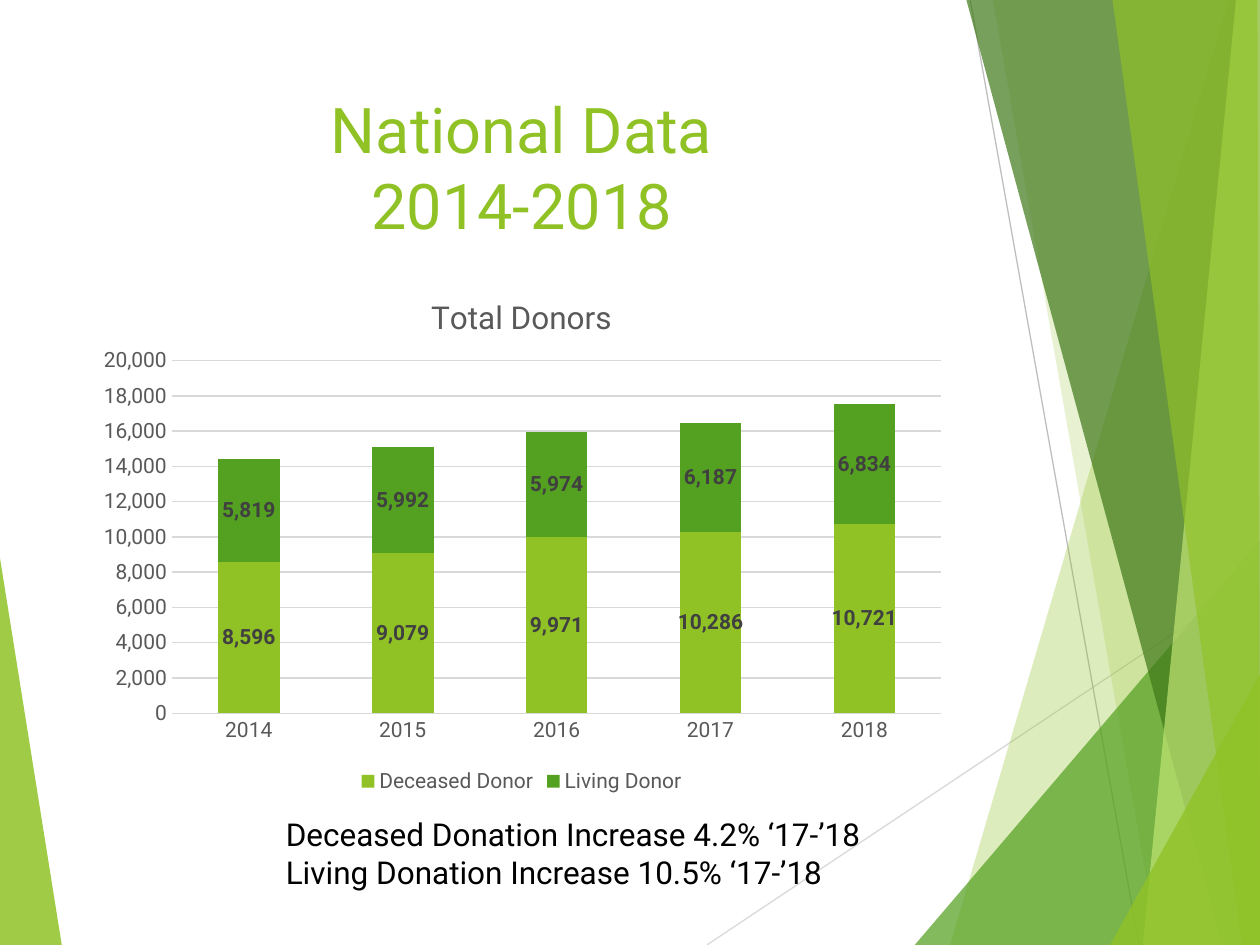
from lxml.etree import SubElement
from pptx import Presentation
from pptx.chart.data import CategoryChartData
from pptx.dml.color import RGBColor
from pptx.enum.chart import XL_CHART_TYPE, XL_LABEL_POSITION, XL_LEGEND_POSITION, XL_TICK_MARK
from pptx.enum.shapes import MSO_CONNECTOR
from pptx.enum.text import MSO_ANCHOR, MSO_AUTO_SIZE, PP_ALIGN
from pptx.oxml import parse_xml
from pptx.oxml.ns import nsdecls, qn
from pptx.util import Inches, Pt

FONT = "Roboto"
LIME = RGBColor(0x90, 0xC2, 0x26)
GREEN = RGBColor(0x54, 0xA0, 0x21)
DARK = RGBColor(0x3F, 0x78, 0x19)
PALE = RGBColor(0xC0, 0xE4, 0x74)
BLACK = RGBColor(0, 0, 0)
TEXT = RGBColor(0x59, 0x59, 0x59)
LABEL = RGBColor(0x40, 0x40, 0x40)
GRID = RGBColor(0xD9, 0xD9, 0xD9)
GRAY = RGBColor(0xBF, 0xBF, 0xBF)

# Content
TITLE = "National Data\v2014-2018"
HEAD = "Total Donors"
YEARS = ["2014", "2015", "2016", "2017", "2018"]
DONORS = [
    ("Deceased Donor", LIME, [8596, 9079, 9971, 10286, 10721]),
    ("Living Donor", GREEN, [5819, 5992, 5974, 6187, 6834]),
]
NOTES = "Deceased Donation Increase 4.2% ‘17-’18\nLiving Donation Increase 10.5% ‘17-’18"

# Backdrop: lines as start, end, colour; facets as colour, opacity, corners
LINES = [((5.61, 7.5), (10, 4.57), GRID), ((7.7, 0), (9.04, 7.5), GRAY)]
FACETS = [
    (LIME, 85, [(0, 4.43), (0.49, 7.5), (0, 7.5)]),
    (LIME, 30, [(9.75, 0), (7.54, 7.5), (10, 7.5), (10, 0)]),
    (LIME, 20, [(7.88, 0), (9.19, 7.5), (10, 7.5), (10, 0)]),
    (GREEN, 72, [(7.26, 7.5), (10, 4.29), (10, 7.5)]),
    (DARK, 70, [(7.67, 0), (9.7, 7.5), (10, 7.5), (10, 0)]),
    (PALE, 70, [(9.81, 0), (9.07, 7.5), (10, 7.5), (10, 0)]),
    (LIME, 65, [(8.83, 0), (9.86, 7.5), (10, 7.5), (9.98, 0)]),
    (LIME, 80, [(8.81, 7.5), (10, 5.35), (10, 7.5)]),
]


def style(font, size, color, bold=False):
    font.name, font.size, font.bold = FONT, Pt(size), bold
    font.color.rgb = color


def add_line(shapes, start, end, color):
    ends = [Inches(n) for n in start + end]
    line = shapes.add_connector(MSO_CONNECTOR.STRAIGHT, *ends)
    line.line.color.rgb = color
    line.line.width = Pt(0.75)
    SubElement(line._element.spPr, qn("a:effectLst"))


def add_facet(shapes, color, alpha, corners):
    points = [(Inches(x), Inches(y)) for x, y in corners]
    pen = shapes.build_freeform(*points[0])
    pen.add_line_segments(points[1:], close=True)
    facet = pen.convert_to_shape()
    facet.shadow.inherit = False
    facet.line.fill.background()
    facet.fill.solid()
    facet.fill.fore_color.rgb = color
    tint = facet._element.spPr.find(qn("a:solidFill"))[0]
    SubElement(tint, qn("a:alpha"), val=str(alpha * 1000))


def set_layout(part, after, **spots):
    """Place a chart part by fractions of the chart's size."""
    old = part.find(qn("c:layout"))
    if old is not None:
        part.remove(old)
    modes = '<c:layoutTarget val="inner"/>' if "w" in spots else ""
    modes += '<c:xMode val="edge"/><c:yMode val="edge"/>'
    sizes = "".join(f'<c:{k} val="{v}"/>' for k, v in spots.items())
    xml = f'<c:layout {nsdecls("c")}><c:manualLayout>{modes}{sizes}</c:manualLayout></c:layout>'
    part.insert(after, parse_xml(xml))


def add_donors(shapes):
    data = CategoryChartData(number_format="#,##0")
    data.categories = YEARS
    for name, _, vals in DONORS:
        data.add_series(name, vals)
    box = [Inches(n) for n in (0.67, 2.1, 6.94, 4.24)]
    chart = shapes.add_chart(XL_CHART_TYPE.COLUMN_STACKED, *box, data).chart
    style(chart.font, 12, TEXT)

    # Heading and legend
    chart.has_title = True
    frame = chart.chart_title.text_frame
    frame.text = HEAD
    style(frame.paragraphs[0].runs[0].font, 18, TEXT)
    set_layout(chart.chart_title._element, 1, x=0.39, y=0.05)
    chart.has_legend = True
    chart.legend.position = XL_LEGEND_POSITION.BOTTOM
    chart.legend.include_in_layout = False
    style(chart.legend.font, 12, TEXT)

    # Axes
    for axis in (chart.category_axis, chart.value_axis):
        axis.major_tick_mark = axis.minor_tick_mark = XL_TICK_MARK.NONE
        axis.format.line.fill.background()
        style(axis.tick_labels.font, 12, TEXT)
    axis = chart.value_axis
    axis.minimum_scale, axis.maximum_scale, axis.major_unit = 0, 20000, 2000
    axis.tick_labels.number_format = "#,##0"
    axis.tick_labels.number_format_is_linked = False
    axis.major_gridlines.format.line.color.rgb = GRID
    axis.major_gridlines.format.line.width = Pt(0.75)

    # Columns
    plot = chart.plots[0]
    plot.gap_width, plot.overlap, plot.vary_by_categories = 150, 100, False
    for bars, (_, color, _) in zip(plot.series, DONORS):
        bars.format.fill.solid()
        bars.format.fill.fore_color.rgb = color
        labels = bars.data_labels
        labels.show_value = True
        labels.position = XL_LABEL_POSITION.CENTER
        style(labels.font, 12, LABEL, True)
    area = chart._chartSpace.chart.plotArea
    set_layout(area, 0, x=0.1, y=0.18, w=0.88, h=0.66)


def main():
    deck = Presentation()
    deck.slide_width, deck.slide_height = Inches(10), Inches(7.5)
    slide = deck.slides.add_slide(deck.slide_layouts[5])
    shapes = slide.shapes

    # Backdrop
    add_facet(shapes, *FACETS[0])
    for line in LINES:
        add_line(shapes, *line)
    for facet in FACETS[1:]:
        add_facet(shapes, *facet)

    # Title
    title = shapes.title
    title.left, title.top = Inches(0.67), Inches(0.67)
    title.width, title.height = Inches(6.94), Inches(1.44)
    frame = title.text_frame
    frame.text = TITLE
    frame.vertical_anchor = MSO_ANCHOR.TOP
    frame.auto_size = MSO_AUTO_SIZE.NONE
    frame.paragraphs[0].alignment = PP_ALIGN.CENTER
    for run in frame.paragraphs[0].runs:
        style(run.font, 36, LIME)

    add_donors(shapes)

    # Notes below the chart
    box = shapes.add_textbox(Inches(2.17), Inches(6.42), Inches(5.08), Inches(0.71))
    frame = box.text_frame
    frame.word_wrap = True
    frame.auto_size = MSO_AUTO_SIZE.SHAPE_TO_FIT_TEXT
    frame.text = NOTES
    for para in frame.paragraphs:
        style(para.runs[0].font, 18, BLACK)

    deck.save("out.pptx")


if __name__ == "__main__":
    main()
